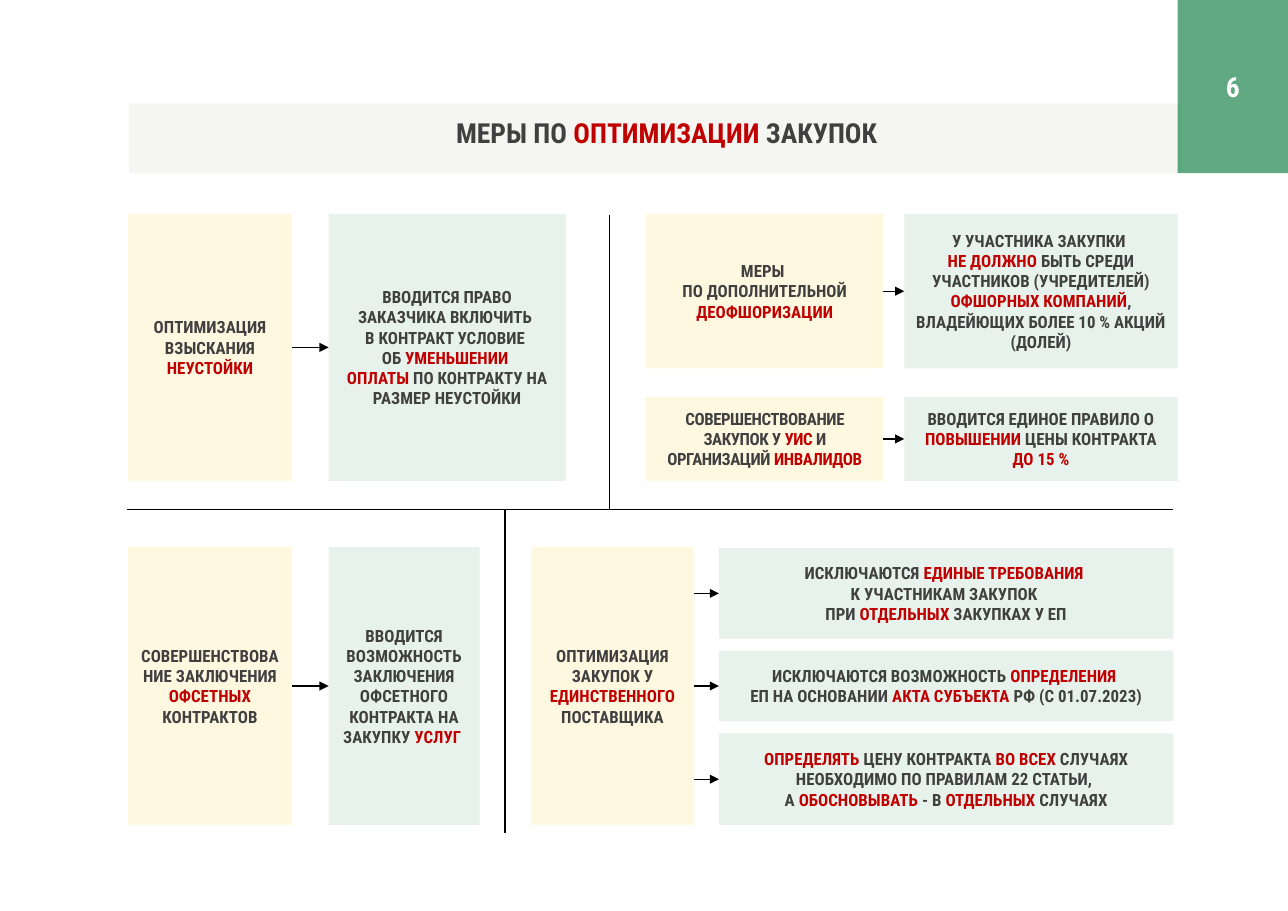
from dataclasses import dataclass

from lxml.etree import SubElement
from pptx import Presentation
from pptx.dml.color import RGBColor
from pptx.enum.shapes import MSO_CONNECTOR, MSO_SHAPE
from pptx.enum.text import MSO_ANCHOR, PP_ALIGN
from pptx.oxml.ns import qn
from pptx.util import Inches, Pt


@dataclass(frozen=True)
class Theme:
    font: str = "Roboto Condensed"
    heading_size: float = 18
    body_size: float = 11
    line_width: float = 0.75
    text: str = "404040"
    accent: str = "C00000"
    white: str = "FFFFFF"
    line: str = "000000"
    bar: str = "F5F6F1"
    corner: str = "077A3E"
    cause: str = "FFF8E1"
    effect: str = "E7F2EC"


theme = Theme()
deck = Presentation()
deck.slide_width, deck.slide_height = Inches(11.68), Inches(8.26)
page = deck.slides.add_slide(deck.slide_layouts[6])


def add_box(area, text="", fill=None, size=theme.body_size, color=theme.text, spacing=0):
    """Asterisks enclose accented words; a blank line starts a paragraph."""
    place = [Inches(value) for value in area]
    if fill:
        box = page.shapes.add_shape(MSO_SHAPE.RECTANGLE, *place)
        box.shadow.inherit = False
        box.fill.solid()
        box.fill.fore_color.rgb = RGBColor.from_string(fill)
        box.line.fill.background()
    else:
        box = page.shapes.add_textbox(*place)
    frame = box.text_frame
    frame.word_wrap = True
    frame.vertical_anchor = MSO_ANCHOR.MIDDLE if fill else MSO_ANCHOR.TOP
    accented = False
    for number, paragraph in enumerate(text.split("\n\n")):
        para = frame.add_paragraph() if number else frame.paragraphs[0]
        para.alignment = PP_ALIGN.CENTER
        for part_number, part in enumerate(paragraph.split("*")):
            if part_number:
                accented = not accented
            for line_number, words in enumerate(part.split("\n")):
                if line_number:
                    para.add_line_break()
                if not words:
                    continue
                span = para.add_run()
                span.text = words
                span.font.name = theme.font
                span.font.size = Pt(size)
                span.font.bold = True
                span.font.color.rgb = RGBColor.from_string(theme.accent if accented else color)
                if spacing:
                    span._r.get_or_add_rPr().set("spc", str(spacing))
    return box


def add_line(start, end, arrow=False):
    points = [Inches(value) for value in (*start, *end)]
    line = page.shapes.add_connector(MSO_CONNECTOR.STRAIGHT, *points)
    line.line.color.rgb = RGBColor.from_string(theme.line)
    line.line.width = Pt(theme.line_width)
    if arrow:
        SubElement(line.line._get_or_add_ln(), qn("a:tailEnd"), type="triangle")
    SubElement(line._element.spPr, qn("a:effectLst"))
    return line


# Heading and page number
add_box((1.17, 0.94, 9.55, 0.63), fill=theme.bar)
add_box((1.67, 1, 8.75, 0.4), "МЕРЫ ПО *ОПТИМИЗАЦИИ *ЗАКУПОК", size=theme.heading_size)
corner = add_box((10.68, -0.01, 1, 1.58), "6", theme.corner, theme.heading_size, theme.white)
corner_color = corner.fill._xPr.find(qn("a:solidFill"))[0]
SubElement(corner_color, qn("a:alpha"), val="64000")

# Dividers between the four topics
add_line((1.15, 4.62), (10.64, 4.62))
add_line((4.58, 7.55), (4.58, 4.62))
add_line((5.53, 4.62), (5.53, 1.95))

# Each topic: area, text, letter spacing, then the measures it leads to
topics = [
    ((1.16, 1.94, 1.49, 2.42), "ОПТИМИЗАЦИЯ ВЗЫСКАНИЯ *НЕУСТОЙКИ*", 0, [
        ((2.98, 1.94, 2.15, 2.42),
         "ВВОДИТСЯ ПРАВО ЗАКАЗЧИКА ВКЛЮЧИТЬ \nВ КОНТРАКТ УСЛОВИЕ \nОБ *УМЕНЬШЕНИИ \n\n"
         "ОПЛАТЫ* ПО КОНТРАКТУ НА РАЗМЕР НЕУСТОЙКИ"),
    ]),
    ((5.86, 1.94, 2.15, 1.4), "МЕРЫ \n\nПО ДОПОЛНИТЕЛЬНОЙ *ДЕОФШОРИЗАЦИИ*", 0, [
        ((8.2, 1.94, 2.48, 1.4),
         "У УЧАСТНИКА ЗАКУПКИ \n*НЕ ДОЛЖНО *БЫТЬ СРЕДИ УЧАСТНИКОВ (УЧРЕДИТЕЛЕЙ) "
         "*ОФШОРНЫХ КОМПАНИЙ*, ВЛАДЕЙЮЩИХ БОЛЕЕ 10 % АКЦИЙ (ДОЛЕЙ)"),
    ]),
    ((5.86, 3.6, 2.15, 0.76),
     "СОВЕРШЕНСТВОВАНИЕ ЗАКУПОК У *УИС* И ОРГАНИЗАЦИЙ *ИНВАЛИДОВ*", -30, [
        ((8.2, 3.6, 2.48, 0.76),
         "ВВОДИТСЯ ЕДИНОЕ ПРАВИЛО О *ПОВЫШЕНИИ* ЦЕНЫ КОНТРАКТА *ДО 15 %*"),
    ]),
    ((1.16, 4.96, 1.49, 2.52), "СОВЕРШЕНСТВОВАНИЕ ЗАКЛЮЧЕНИЯ *ОФСЕТНЫХ* КОНТРАКТОВ", 0, [
        ((2.98, 4.96, 1.37, 2.52),
         "ВВОДИТСЯ ВОЗМОЖНОСТЬ ЗАКЛЮЧЕНИЯ ОФСЕТНОГО КОНТРАКТА НА ЗАКУПКУ *УСЛУГ *"),
    ]),
    ((4.82, 4.96, 1.47, 2.52), "ОПТИМИЗАЦИЯ ЗАКУПОК У *ЕДИНСТВЕННОГО* ПОСТАВЩИКА", 0, [
        ((6.52, 4.97, 4.12, 0.82),
         "ИСКЛЮЧАЮТСЯ *ЕДИНЫЕ ТРЕБОВАНИЯ \n*К УЧАСТНИКАМ ЗАКУПОК \n"
         "ПРИ *ОТДЕЛЬНЫХ* ЗАКУПКАХ У ЕП"),
        ((6.52, 5.9, 4.12, 0.64),
         "ИСКЛЮЧАЮТСЯ ВОЗМОЖНОСТЬ *ОПРЕДЕЛЕНИЯ \n*ЕП НА ОСНОВАНИИ "
         "*АКТА СУБЪЕКТА *РФ (С 01.07.2023)"),
        ((6.52, 6.65, 4.12, 0.83),
         "*ОПРЕДЕЛЯТЬ* ЦЕНУ КОНТРАКТА *ВО ВСЕХ *СЛУЧАЯХ НЕОБХОДИМО ПО ПРАВИЛАМ 22 СТАТЬИ, \n"
         "А *ОБОСНОВЫВАТЬ* - В *ОТДЕЛЬНЫХ* СЛУЧАЯХ"),
    ]),
]

# Boxes joined by arrows at the height of each measure
for area, text, spacing, measures in topics:
    left, top, width, height = area
    topic_box = add_box(area, text, theme.cause, spacing=spacing)
    for measure_area, measure_text in measures:
        measure_box = add_box(measure_area, measure_text, theme.effect)
        middle = measure_area[1] + measure_area[3] / 2
        arrow = add_line((left + width, middle), (measure_area[0], middle), arrow=True)
        if abs(middle - top - height / 2) < 0.01:
            arrow.begin_connect(topic_box, 3)
        arrow.end_connect(measure_box, 1)

deck.save("out.pptx")
